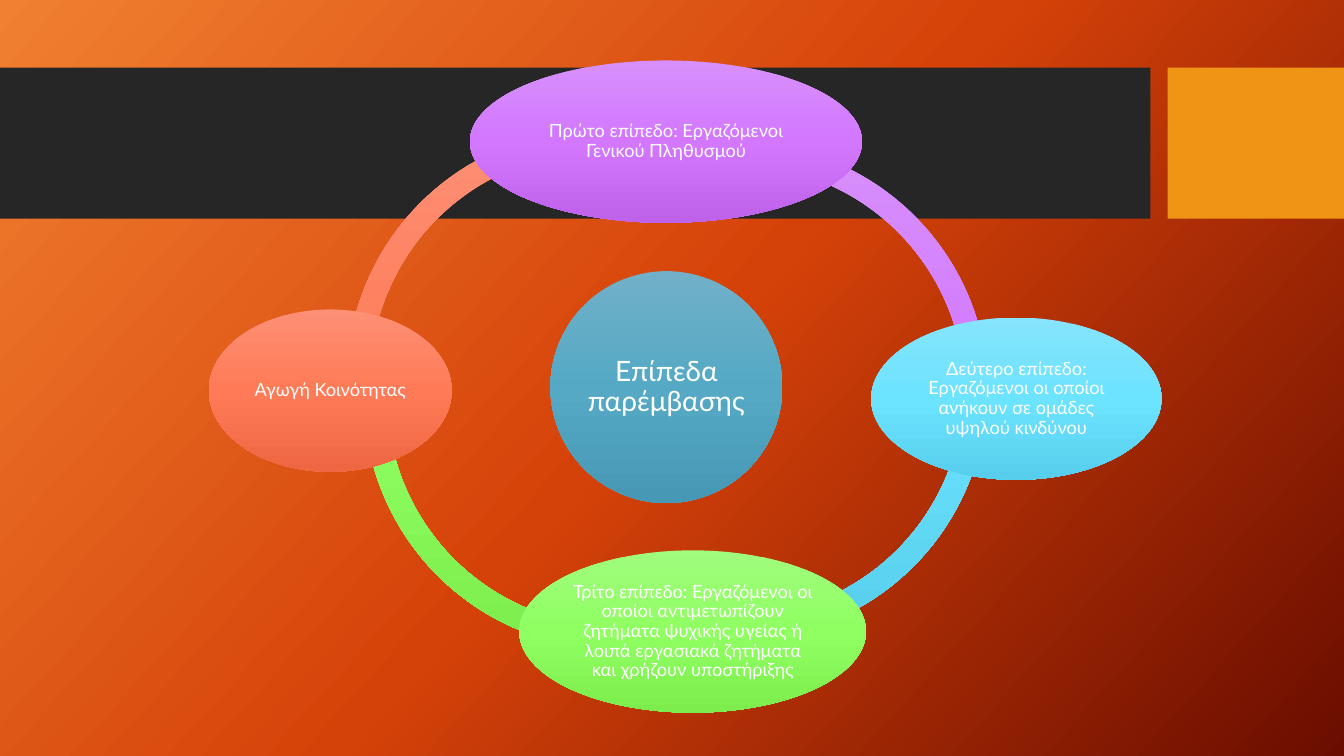
from copy import deepcopy

from pptx import Presentation
from pptx.dml.color import RGBColor
from pptx.enum import shapes, text
from pptx.util import Inches, Pt

RED = ("FD8F75", "FF7B57", "EE6742")
GREEN = ("A0FC7D", "90FF62", "7CED4D")
CYAN = ("86E4FC", "6CE3FF", "57CFEC")
PURPLE = ("D790FB", "D377FF", "BE62EA")
BLUE = ("71B0C8", "55A9C5", "4798B4")
ORANGE = ("F18031", "D54209", "6A0D00")

RING_SIZE = 4.99
RING_THICKNESS = 0.046
LEVEL_HEIGHT = 1.61


def rgb(value):
    return RGBColor.from_string(value)


def fill_gradient(fill, colors, angle=90):
    fill.gradient()
    fill.gradient_angle = 360 - angle
    first = fill.gradient_stops[0]._gs
    first.addnext(deepcopy(first))
    for stop, color, position in zip(fill.gradient_stops, colors, (0, 0.5, 1)):
        stop.color.rgb = rgb(color)
        stop.position = position


def add_plain_shape(s, kind, left, top, width, height):
    sp = s.shapes.add_shape(
        kind, Inches(left), Inches(top), Inches(width), Inches(height))
    sp.shadow.inherit = False
    sp.line.fill.background()
    return sp


def add_bar(s, left, width, color):
    sp = add_plain_shape(s, shapes.MSO_SHAPE.RECTANGLE, left, 0.67, width, 1.5)
    sp.fill.solid()
    sp.fill.fore_color.rgb = rgb(color)


def add_arc(s, left, top, start, end, colors):
    sp = add_plain_shape(
        s, shapes.MSO_SHAPE.BLOCK_ARC, left, top, RING_SIZE, RING_SIZE)
    for i, value in enumerate((start, end, RING_THICKNESS)):
        sp.adjustments[i] = value
    fill_gradient(sp.fill, colors)


def add_oval(s, left, top, width, height, colors, label, size=13, inset=0.02):
    sp = add_plain_shape(s, shapes.MSO_SHAPE.OVAL, left, top, width, height)
    fill_gradient(sp.fill, colors)
    tf = sp.text_frame
    tf.word_wrap = True
    tf.vertical_anchor = text.MSO_ANCHOR.MIDDLE
    tf.margin_left = tf.margin_right = Inches(inset)
    tf.margin_top = tf.margin_bottom = Inches(inset)
    p = tf.paragraphs[0]
    p.alignment = text.PP_ALIGN.CENTER
    p.line_spacing = 0.9
    r = p.add_run()
    r.text = label
    r.font.name = "Lato"
    r.font.size = Pt(size)
    r.font.color.rgb = rgb("FFFFFF")


def main():
    prs = Presentation()
    prs.slide_width = Inches(13.33)
    prs.slide_height = Inches(7.5)
    s = prs.slides.add_slide(prs.slide_layouts[6])
    fill_gradient(s.background.fill, ORANGE, 42)

    add_bar(s, 0, 11.41, "262626")
    add_bar(s, 11.58, 1.75, "F09415")

    arcs = [
        (3.44, 1.28, 105.15, 174.88, RED),
        (3.61, 1.45, 36.95, 111.43, GREEN),
        (4.8, 1.36, 0.14, 65.1, CYAN),
        (4.81, 1.41, 146.46, 5.14, PURPLE),
    ]
    for arc in arcs:
        add_arc(s, *arc)

    add_oval(s, 5.46, 2.69, 2.3, 2.3, BLUE, "Επίπεδα παρέμβασης", 20, 0.03)

    levels = [
        (4.66, 0.6, 3.89, PURPLE,
         "Πρώτο επίπεδο: Εργαζόμενοι Γενικού Πληθυσμού"),
        (8.64, 3.15, 2.88, CYAN,
         "Δεύτερο επίπεδο: Εργαζόμενοι οι οποίοι ανήκουν σε ομάδες "
         "υψηλού κινδύνου"),
        (5.15, 5.46, 3.44, GREEN,
         "Τρίτο επίπεδο: Εργαζόμενοι οι οποίοι αντιμετωπίζουν ζητήματα "
         "ψυχικής υγείας ή λοιπά εργασιακά ζητήματα και χρήζουν υποστήριξης"),
        (2.07, 3.07, 2.41, RED, "Αγωγή Κοινότητας"),
    ]
    for left, top, width, colors, label in levels:
        add_oval(s, left, top, width, LEVEL_HEIGHT, colors, label)

    prs.save("out.pptx")


if __name__ == "__main__":
    main()
